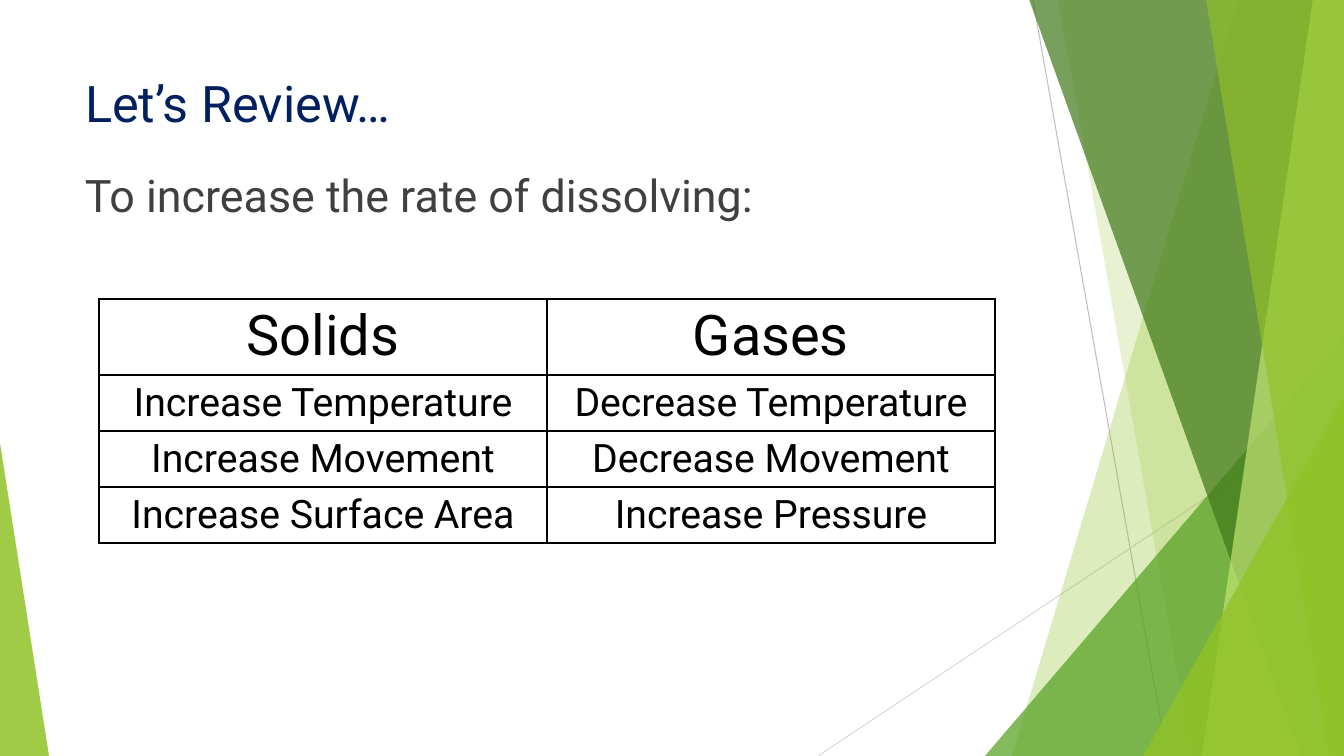
import pptx
import pptx.util
import pptx.dml.color
import pptx.enum.shapes
import pptx.enum.text
import pptx.oxml
import pptx.oxml.ns
import lxml.etree

SCALE = 914400 / 100.8
ALIGN = pptx.enum.text.PP_ALIGN
KIND = pptx.enum.shapes.MSO_SHAPE
qn = pptx.oxml.ns.qn


def rgb(code):
    return pptx.dml.color.RGBColor.from_string(code)


def write(frame, text, size, color, align=ALIGN.LEFT, before=0):
    frame.word_wrap = True
    para = frame.paragraphs[0]
    para.alignment = align
    para.space_before = pptx.util.Pt(before)
    run = para.add_run()
    run.text = text
    run.font.name = "Roboto"
    run.font.size = pptx.util.Pt(size)
    run.font.color.rgb = rgb(color)


deck = pptx.Presentation()
deck.slide_width, deck.slide_height = round(1344 * SCALE), round(756 * SCALE)
slide = deck.slides.add_slide(deck.slide_layouts[5])
shapes = slide.shapes

# Thin lines behind the facets
for ends, color in [((1033, 0, 1167, 756), "BFBFBF"),
                    ((1344, 406, 818, 756), "D9D9D9")]:
    line = shapes.add_connector(pptx.enum.shapes.MSO_CONNECTOR.STRAIGHT,
                                *[round(n * SCALE) for n in ends])
    line.line.color.rgb = rgb(color)
    line.line.width = pptx.util.Pt(0.75)
    lxml.etree.SubElement(line._element.spPr, qn("a:effectLst"))

# Facets, back to front: a pair gives the top and bottom of a slanted
# left edge; a box gives a triangle with its peak at adj
facets = [
    ((1238, 1012), None, "90C226", 30),
    ((1058, 1192), None, "90C226", 20),
    ((985, 336, 359, 420), 1, "54A021", 72),
    ((1029, 1301), None, "3F7819", 70),
    ((1313, 1202), None, "C0E474", 70),
    ((1206, 1329), None, "90C226", 65),
    ((1143, 396, 201, 360), 1, "90C226", 80),
    ((0, 443, 49, 313), 0, "90C226", 85),
]
for place, peak, color, alpha in facets:
    if peak is None:
        top, low = place
        form = shapes.build_freeform(top, -1, scale=SCALE)
        form.add_line_segments([(1344, -1), (1344, 756), (low, 756)])
        facet = form.convert_to_shape()
    else:
        facet = shapes.add_shape(KIND.ISOSCELES_TRIANGLE,
                                 *[round(n * SCALE) for n in place])
        facet.adjustments[0] = peak
    facet.shadow.inherit = False
    facet.line.fill.background()
    facet.fill.solid()
    facet.fill.fore_color.rgb = rgb(color)
    tint = facet._element.spPr.find(".//" + qn("a:srgbClr"))
    lxml.etree.SubElement(tint, qn("a:alpha"), val=str(alpha * 1000))

# Title and lead line
title = shapes.title
title.left, title.top, title.width, title.height = [
    round(n * SCALE) for n in (75, 67, 948, 145)]
lead = shapes.add_textbox(*[round(n * SCALE) for n in (75, 163, 948, 427)])
for box in (title, lead):
    box.text_frame.vertical_anchor = pptx.enum.text.MSO_ANCHOR.TOP
    box.text_frame.auto_size = pptx.enum.text.MSO_AUTO_SIZE.NONE
write(title.text_frame, "Let’s Review…", 36, "002060")
write(lead.text_frame, "To increase the rate of dissolving:", 32, "404040",
      before=10)

# Table of solids and gases
rows = [
    ("Solids", "Gases"),
    ("Increase Temperature", "Decrease Temperature"),
    ("Increase Movement", "Decrease Movement"),
    ("Increase Surface Area", "Increase Pressure"),
]
table = shapes.add_table(
    4, 2, *[round(n * SCALE) for n in (99, 299, 896, 244)]).table
table.first_row = table.horz_banding = False
for r, words in enumerate(rows):
    table.rows[r].height = round((56 if r else 76) * SCALE)
    for c, word in enumerate(words):
        cell = table.cell(r, c)
        write(cell.text_frame, word, 28 if r else 40, "000000", ALIGN.CENTER)
        cell.fill.background()
        props = cell._tc.get_or_add_tcPr()
        for i, side in enumerate("LRTB"):
            edge = lxml.etree.Element(qn("a:ln" + side), w="12700")
            fill = lxml.etree.SubElement(edge, qn("a:solidFill"))
            lxml.etree.SubElement(fill, qn("a:srgbClr"), val="000000")
            props.insert(i, edge)

deck.save("out.pptx")
